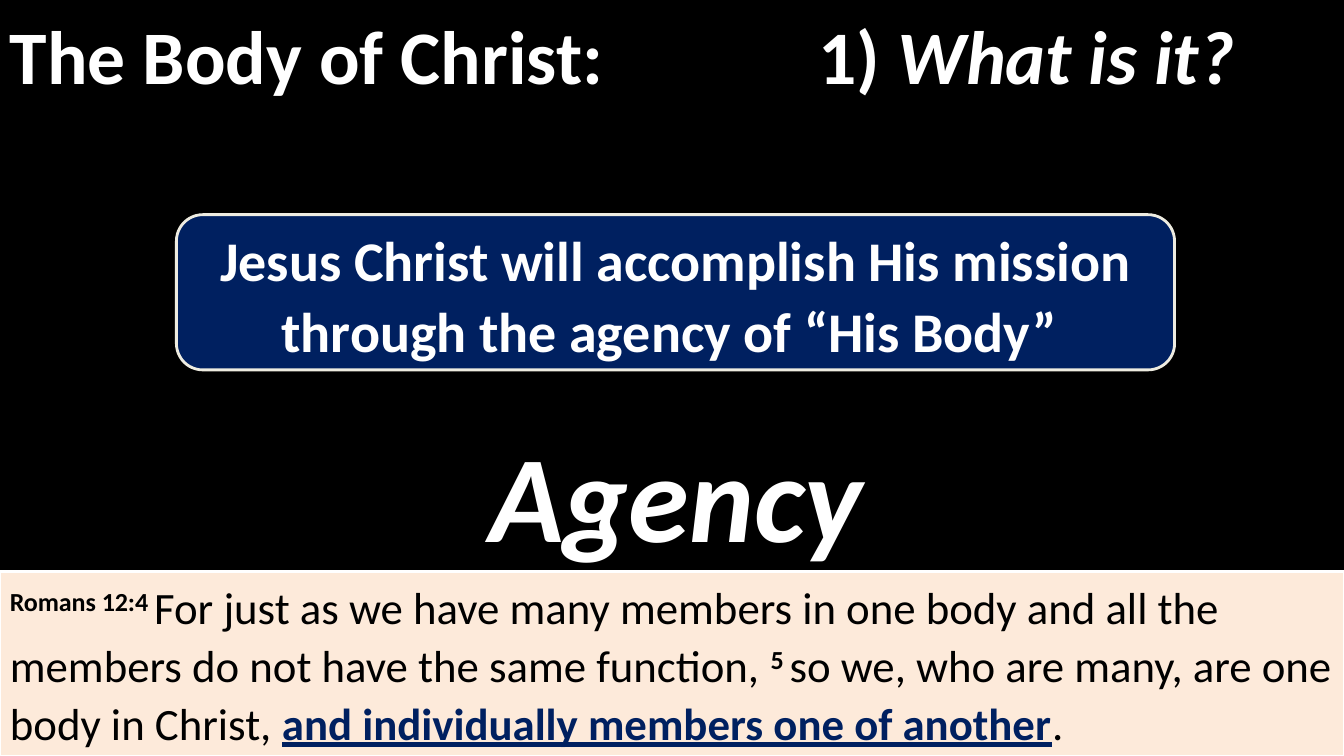
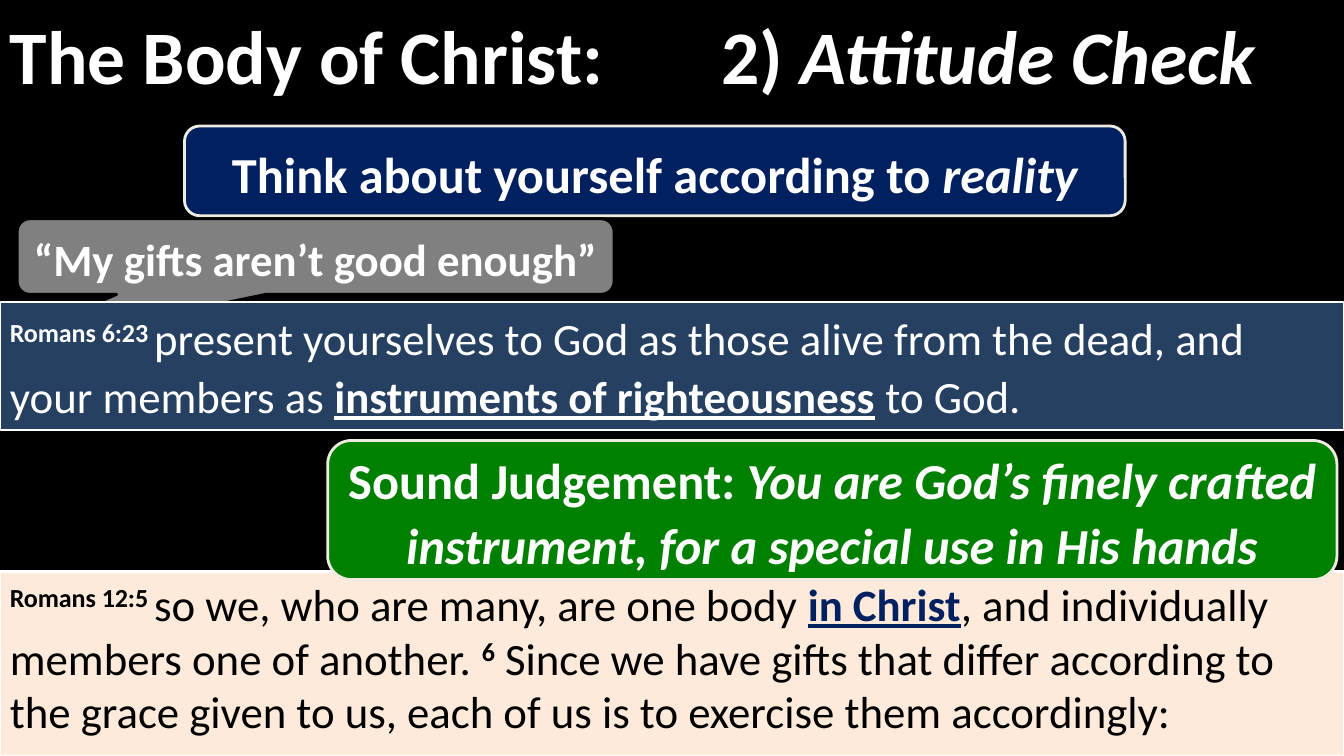
"""Build two sermon slides on the Body of Christ."""
from lxml.etree import SubElement
from pptx import Presentation
from pptx.dml.color import RGBColor
from pptx.enum.shapes import MSO_SHAPE as SHAPE
from pptx.enum.text import MSO_ANCHOR as ANCHOR, PP_ALIGN as ALIGN
from pptx.oxml.ns import qn
from pptx.util import Inches, Pt

THEME = {
    "font": "Calibri",
    "black": "000000", "white": "FFFFFF", "cream": "FDEADA", "navy": "002060",
    "slate": "254061", "gray": "808080", "green": "008000", "ivory": "EEECE1",
    "title": 54, "word": 88, "verse": 32,
}
WIDTH, HEIGHT = 13.33, 7.5
TITLE_BOX = (0, 0, WIDTH, 1.07)
VERSE_BOX = (0, 5.67, WIDTH, 1.83)
TAIL = (-0.22, 0.5, 0.17)
LOOSE = 1.07

STYLES = {
    "plain": {},
    "bold": {"bold": True},
    "italic": {"bold": True, "italic": True},
    "key": {"bold": True, "underline": True},
    "ref": {"bold": True},
}

SLIDES = [
    {
        "title": ("1) ", "What is it?", 8.02),
        "verse": ([
            ("Romans 12:4 ", "ref"),
            ("For just as we have many members in one body and all the members "
             "do not have the same function, ", "plain"),
            ("5 ", "ref"),
            ("so we, who are many, are one body in Christ, ", "plain"),
            ("and individually members one of another", "key"),
            (".", "plain"),
        ], LOOSE),
        "word": ("Agency", (0.87, 4.0, 11.67, 1.68)),
        "callouts": [
            ([("Jesus Christ will accomplish His mission through the agency of "
               "“His Body” ", "bold")],
             (1.75, 2.13, 9.9, 1.54), 40, "navy", "ivory", TAIL),
        ],
    },
    {
        "title": ("2) ", "Attitude Check", 7.06),
        "verse": ([
            ("Romans 12:5 ", "ref"),
            ("so we, who are many, are one body ", "plain"),
            ("in Christ", "key"),
            (", and individually members one of another. ", "plain"),
            ("6", "ref"),
            (" Since we have gifts that differ according to the grace given to us, "
             "each of us is to exercise them accordingly:", "plain"),
        ], 1.0),
        "callouts": [
            ([("Think about yourself according to ", "bold"), ("reality", "italic")],
             (1.83, 1.25, 9.33, 0.89), 36, "navy", "ivory", TAIL),
            ([("“My gifts aren’t good enough”", "bold")],
             (0.17, 2.17, 5.92, 0.75), 32, "gray", "black", (-0.55, 1.26, 0.17)),
            ([("Sound Judgement: ", "bold"),
              ("You are God’s finely crafted instrument, for a special use in His hands",
               "italic")],
             (3.25, 4.37, 10.01, 1.38), 36, "green", "ivory", TAIL),
        ],
        "band": ([
            ("Romans 6:23 ", "ref"),
            ("present yourselves to God as those alive from the dead, "
             "and your members as ", "plain"),
            ("instruments of righteousness", "key"),
            (" to God.", "plain"),
        ], (0, 3, WIDTH, 1.27)),
    },
]


def color(name):
    return RGBColor.from_string(THEME[name])


def add_text(sp, runs, size, ink="white", key="white", align=ALIGN.LEFT,
             anchor=ANCHOR.MIDDLE, spacing=LOOSE):
    tf = sp.text_frame
    tf.word_wrap = True
    tf.vertical_anchor = anchor
    p = tf.paragraphs[0]
    p.alignment, p.line_spacing = align, spacing
    for text, style in runs:
        r = p.add_run()
        r.text = text
        values = {"name": THEME["font"], "size": Pt(size), "bold": False, **STYLES[style]}
        for name, value in values.items():
            setattr(r.font, name, value)
        r.font.color.rgb = color(key if style == "key" else ink)
        if style == "ref":
            r._r.get_or_add_rPr().set("baseline", "30000")
    return p


def add_box(s, kind, box, fill, line=None, weight=1.5):
    sp = s.shapes.add_shape(kind, *map(Inches, box))
    sp.shadow.inherit = False
    sp.fill.solid()
    sp.fill.fore_color.rgb = color(fill)
    if line:
        sp.line.color.rgb = color(line)
        sp.line.width = Pt(weight)
    else:
        sp.line.fill.background()
    return sp


def add_title(s, number, topic, stop):
    sp = add_box(s, SHAPE.RECTANGLE, TITLE_BOX, "black")
    runs = [("The Body of Christ:\t" + number, "bold"), (topic, "italic")]
    p = add_text(sp, runs, THEME["title"], spacing=1.0)
    tabs = SubElement(p._p.get_or_add_pPr(), qn("a:tabLst"))
    SubElement(tabs, qn("a:tab"), pos=str(Inches(stop)), algn="l")


def add_callout(s, runs, box, size, fill, line, tail):
    sp = add_box(s, SHAPE.ROUNDED_RECTANGULAR_CALLOUT, box, fill, line, 2)
    for i, value in enumerate(tail):
        sp.adjustments[i] = value
    add_text(sp, runs, size, align=ALIGN.CENTER)


def add_verse(s, runs, box, fill, **text):
    sp = add_box(s, SHAPE.RECTANGLE, box, fill, "white")
    add_text(sp, runs, THEME["verse"], anchor=ANCHOR.TOP, **text)


def build_slide(prs, content):
    s = prs.slides.add_slide(prs.slide_layouts[6])
    s.background.fill.solid()
    s.background.fill.fore_color.rgb = color("black")
    runs, spacing = content["verse"]
    add_verse(s, runs, VERSE_BOX, "cream", ink="black", key="navy", spacing=spacing)
    add_title(s, *content["title"])
    if "word" in content:
        word, box = content["word"]
        sp = s.shapes.add_textbox(*map(Inches, box))
        add_text(sp, [(word, "italic")], THEME["word"], align=ALIGN.CENTER)
    for callout in content["callouts"]:
        add_callout(s, *callout)
    if "band" in content:
        add_verse(s, *content["band"], "slate")


def main():
    prs = Presentation()
    prs.slide_width, prs.slide_height = Inches(WIDTH), Inches(HEIGHT)
    for content in SLIDES:
        build_slide(prs, content)
    prs.save("out.pptx")


if __name__ == "__main__":
    main()
